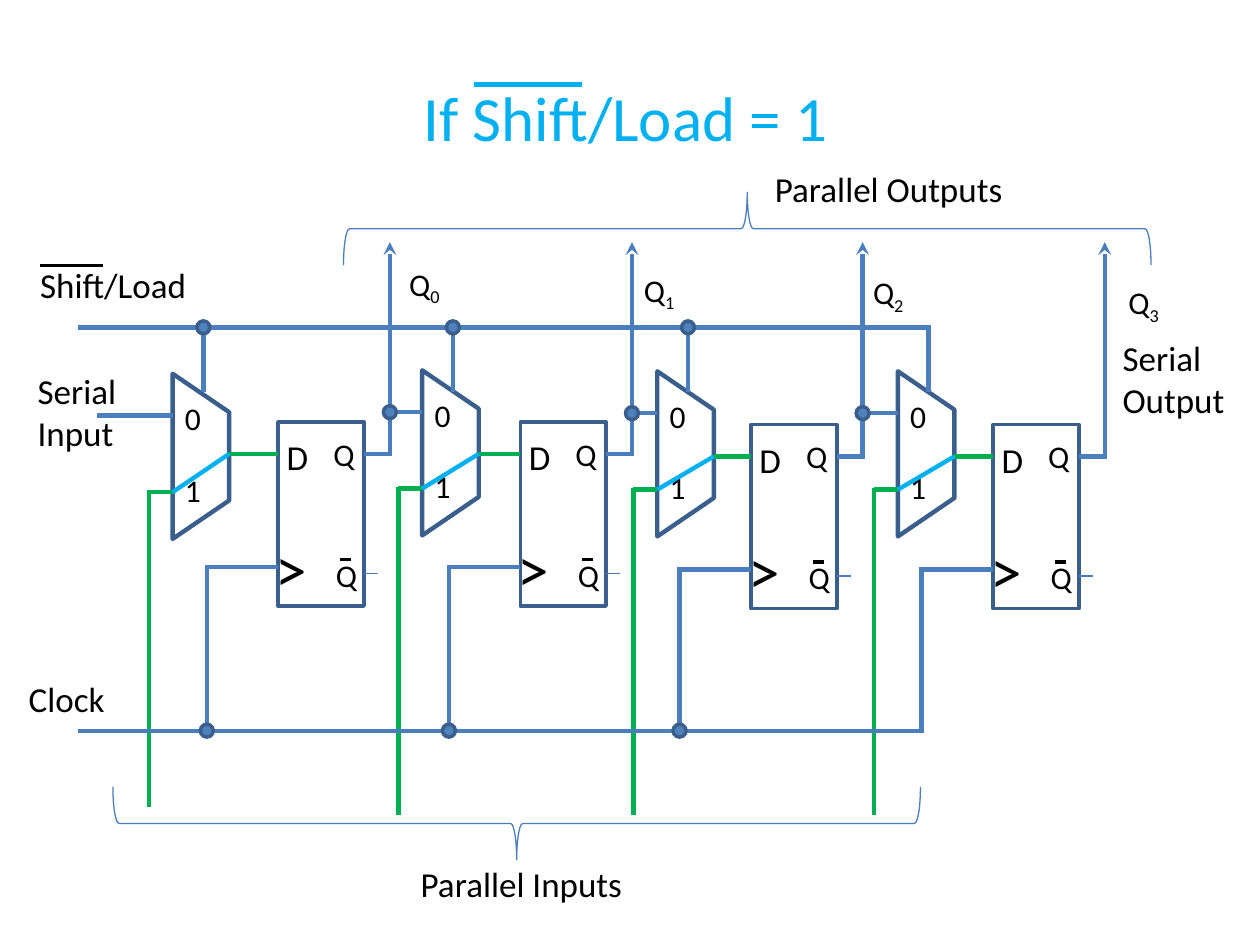
from dataclasses import dataclass

from lxml import etree
from pptx import Presentation
from pptx.dml.color import RGBColor
from pptx.enum.shapes import MSO_CONNECTOR, MSO_SHAPE
from pptx.enum.text import MSO_ANCHOR, PP_ALIGN
from pptx.oxml.ns import qn
from pptx.util import Cm, Pt

STRAIGHT = MSO_CONNECTOR.STRAIGHT
RECTANGLE, TRAPEZOID = MSO_SHAPE.RECTANGLE, MSO_SHAPE.TRAPEZOID
OVAL, RIGHT_BRACE = MSO_SHAPE.OVAL, MSO_SHAPE.RIGHT_BRACE
LEFT, CENTER = PP_ALIGN.LEFT, PP_ALIGN.CENTER
TOP, MIDDLE = MSO_ANCHOR.TOP, MSO_ANCHOR.MIDDLE


@dataclass(frozen=True)
class Theme:
    font: str = "Calibri"
    ink: str = "000000"
    accent: str = "00B0F0"
    wire: str = "4B7EBC"
    outline: str = "3A5F8C"
    dot: str = "4F81BD"
    data: str = "00B050"
    paper: str = "FFFFFF"
    title: int = 36
    clock_mark: int = 36
    label: int = 20
    pin: int = 18
    thick: float = 2.5
    medium: float = 2
    overline: float = 1.75
    thin: float = 0.75


THEME = Theme()

# All positions are in centimetres.
FLIPFLOP_WIDTH, FLIPFLOP_HEIGHT = 1.73, 3.71
MUX_WIDTH, MUX_HEIGHT = 1.14, 3.33
NODE_SIZE = 0.26
SELECT_Y, CLOCK_Y, OUTPUT_TOP = 6.6, 14.73, 4.88
BUS_START, SERIAL_START = 1.57, 1.96


@dataclass(frozen=True)
class Stage:
    flipflop_x: float
    flipflop_y: float
    mux_x: float
    mux_middle: float
    load_bottom: float
    output_label: tuple

    @property
    def data_y(self):
        return self.flipflop_y + 0.64

    @property
    def clock_pin_y(self):
        return self.flipflop_y + 2.92

    @property
    def output_x(self):
        return self.flipflop_x + 2.25

    @property
    def clock_x(self):
        return self.flipflop_x - 1.44

    @property
    def select_x(self):
        return self.mux_x + 0.62

    @property
    def shift_y(self):
        return self.mux_middle - 0.82


STAGES = [
    Stage(5.61, 8.51, 3.48, 9.2, 16.26, (8, 5.21)),
    Stage(10.49, 8.51, 8.51, 9.13, 16.43, (12.73, 5.33)),
    Stage(15.14, 8.56, 13.25, 9.15, 16.43, (17.35, 5.38)),
    Stage(20.02, 8.56, 18.1, 9.15, 16.43, (22.5, 5.59)),
]


def add_text(slide, text, x, y, width, height, size=THEME.label, color=THEME.ink,
             align=LEFT, anchor=TOP, subscript=""):
    frame = slide.shapes.add_textbox(Cm(x), Cm(y), Cm(width), Cm(height)).text_frame
    frame.word_wrap = True
    frame.margin_right = 0
    frame.vertical_anchor = anchor
    for index, line in enumerate(text.split("\n")):
        paragraph = frame.paragraphs[0] if index == 0 else frame.add_paragraph()
        paragraph.alignment = align
        paragraph.font.size = Pt(size)
        for part in filter(None, (line, subscript)):
            run = paragraph.add_run()
            run.text = part
            run.font.name = THEME.font
            run.font.size = Pt(size)
            run.font.color.rgb = RGBColor.from_string(color)
    if subscript:
        run._r.get_or_add_rPr().set("baseline", "-25000")


def add_outline_shape(slide, kind, x, y, width, height, line=THEME.outline,
                      weight=THEME.medium, fill=None, rotation=0):
    shape = slide.shapes.add_shape(kind, Cm(x), Cm(y), Cm(width), Cm(height))
    shape.shadow.inherit = False
    shape.rotation = rotation
    shape.line.color.rgb = RGBColor.from_string(line)
    shape.line.width = Pt(weight)
    if fill:
        shape.fill.solid()
        shape.fill.fore_color.rgb = RGBColor.from_string(fill)
    else:
        shape.fill.background()
    return shape


def add_wire(slide, start, end, color=THEME.wire, weight=THEME.thick, arrow=False):
    wire = slide.shapes.add_connector(STRAIGHT, *map(Cm, (*start, *end)))
    wire.line.color.rgb = RGBColor.from_string(color)
    wire.line.width = Pt(weight)
    if arrow:
        etree.SubElement(wire.line._get_or_add_ln(), qn("a:tailEnd"), type="stealth")
    etree.SubElement(wire._element.spPr, qn("a:effectLst"))


def add_node(slide, x, y):
    """Mark a junction of wires, centred on the given point."""
    add_outline_shape(slide, OVAL, x - NODE_SIZE / 2, y - NODE_SIZE / 2,
                      NODE_SIZE, NODE_SIZE, fill=THEME.dot)


def add_brace(slide, x, y, rotation):
    add_outline_shape(slide, RIGHT_BRACE, x, y, 1.47, 16.28, line=THEME.wire,
                      weight=THEME.thin, rotation=rotation)


def add_flipflop(slide, stage):
    x, y = stage.flipflop_x, stage.flipflop_y
    right = x + FLIPFLOP_WIDTH
    add_outline_shape(slide, RECTANGLE, x, y, FLIPFLOP_WIDTH, FLIPFLOP_HEIGHT,
                      fill=THEME.paper)
    add_text(slide, "D", x - 0.08, y + 0.15, 0.46, 1.12)
    add_text(slide, ">", x - 0.3, y + 2.03, 0.84, 1.07, size=THEME.clock_mark)
    add_text(slide, "Q", x + 0.86, y + 0.13, 0.46, 1.02, size=THEME.pin)
    add_text(slide, "Q", x + 0.91, y + 2.57, 0.46, 1.02, size=THEME.pin)
    add_wire(slide, (x + 1.24, y + 2.77), (x + 1.47, y + 2.77), THEME.ink, THEME.medium)
    add_wire(slide, (right, y + 3.05), (right + 0.28, y + 3.05), weight=THEME.thin)


def add_mux(slide, stage):
    """Draw the multiplexer and its active path from input 1."""
    x, middle = stage.mux_x, stage.mux_middle
    right, load_y, load_x = x + MUX_WIDTH, middle + 0.72, x - 0.48
    mux = add_outline_shape(slide, TRAPEZOID, x + (MUX_WIDTH - MUX_HEIGHT) / 2,
                            middle - MUX_WIDTH / 2, MUX_HEIGHT, MUX_WIDTH,
                            weight=THEME.thick, rotation=90)
    mux.adjustments[0] = 0.68
    add_text(slide, "0", x, middle - 1.28, 0.84, 1.32, size=THEME.pin)
    add_text(slide, "1", x, middle + 0.17, 0.84, 1.32, size=THEME.pin)
    add_wire(slide, (load_x, stage.load_bottom), (load_x, load_y - 0.04), THEME.data)
    add_wire(slide, (load_x, load_y), (x, load_y), THEME.data)
    add_wire(slide, (right, stage.data_y), (stage.flipflop_x, stage.data_y), THEME.data)
    add_wire(slide, (right, stage.data_y), (x, load_y), THEME.accent)


def add_output(slide, stage, number):
    x, y = stage.output_x, stage.data_y
    add_wire(slide, (stage.flipflop_x + FLIPFLOP_WIDTH, y), (x + 0.04, y))
    add_wire(slide, (x, y), (x, OUTPUT_TOP), arrow=True)
    add_text(slide, "Q", *stage.output_label, 1.19, 1.02, size=THEME.pin,
             subscript=str(number))


def add_control_wires(slide, stage):
    add_wire(slide, (stage.clock_x, CLOCK_Y), (stage.clock_x, stage.clock_pin_y - 0.04))
    add_wire(slide, (stage.clock_x, stage.clock_pin_y),
             (stage.flipflop_x, stage.clock_pin_y))
    add_wire(slide, (stage.select_x, 7.9), (stage.select_x, SELECT_Y))


def add_buses(slide):
    last = STAGES[-1]
    for bus_y, end_x in ((SELECT_Y, last.select_x), (CLOCK_Y, last.clock_x)):
        add_wire(slide, (BUS_START, bus_y), (end_x + 0.04, bus_y))
    sources = [SERIAL_START] + [stage.output_x for stage in STAGES[:-1]]
    for source_x, stage in zip(sources, STAGES):
        add_wire(slide, (source_x, stage.shift_y), (stage.mux_x, stage.shift_y))
    for stage, following in zip(STAGES, STAGES[1:]):
        add_node(slide, stage.select_x, SELECT_Y)
        add_node(slide, stage.clock_x, CLOCK_Y)
        add_node(slide, stage.output_x, following.shift_y)


def add_labels(slide):
    add_text(slide, "If Shift/Load = 1", 0.84, 1.02, 23.29, 2.67, size=THEME.title,
             color=THEME.accent, align=CENTER, anchor=MIDDLE)
    add_wire(slide, (9.55, 1.7), (11.73, 1.7), THEME.accent)
    add_text(slide, "Shift/Load", 0.56, 5.18, 3.81, 1.12)
    add_wire(slide, (0.81, 5.36), (2.08, 5.36), THEME.ink, THEME.overline)
    add_text(slide, "Serial\nInput", 0.51, 7.32, 2.16, 1.96)
    add_text(slide, "Serial Output", 22.38, 6.65, 2.77, 1.96)
    add_text(slide, "Clock", 0.33, 13.54, 2.16, 1.12)
    add_text(slide, "Parallel Inputs", 8.23, 17.27, 4.9, 1.14)
    add_text(slide, "Parallel Outputs", 15.37, 3.25, 5.49, 1.12)
    add_brace(slide, 9.68, 8.46, 90)
    add_brace(slide, 14.33, -3.53, 270)


def main():
    deck = Presentation()
    deck.slide_width, deck.slide_height = Cm(25.4), Cm(19.05)
    slide = deck.slides.add_slide(deck.slide_layouts[6])
    for number, stage in enumerate(STAGES):
        add_flipflop(slide, stage)
        add_mux(slide, stage)
        add_output(slide, stage, number)
        add_control_wires(slide, stage)
    add_buses(slide)
    add_labels(slide)
    deck.save("out.pptx")


if __name__ == "__main__":
    main()
